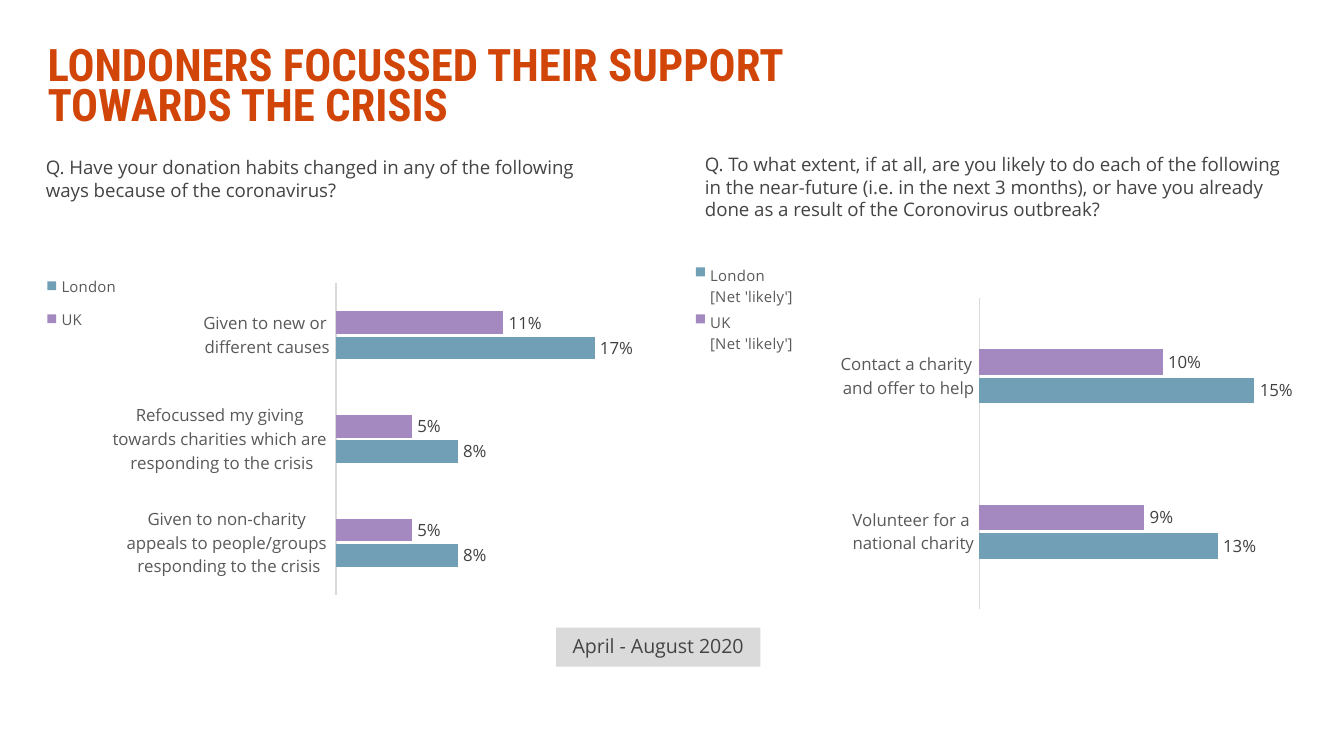
"""Build the slide on how Londoners supported charities during the crisis."""
from pptx import Presentation
from pptx import util as u
from pptx.chart.data import CategoryChartData
from pptx.dml.color import RGBColor
from pptx.enum import chart as charts, shapes, text
from pptx.oxml import parse_xml
from pptx.oxml.ns import nsdecls, qn

COLUMNS, ROWS = 100, 56.25
CELL = u.Inches(0.1)
BODY_FONT, TITLE_FONT = "Open Sans", "Roboto Condensed"
ORANGE = RGBColor(0xD2, 0x45, 0x08)
PURPLE = RGBColor(0xA3, 0x89, 0xBF)
BLUE = RGBColor(0x70, 0x9F, 0xB6)
INK = RGBColor(0x44, 0x44, 0x44)
LABEL_INK = RGBColor(0x40, 0x40, 0x40)
AXIS_INK = RGBColor(0x59, 0x59, 0x59)
AXIS_LINE = RGBColor(0xD9, 0xD9, 0xD9)
PANEL = RGBColor(0xDA, 0xDA, 0xDA)


def place(*cells):
    """Turn grid columns and rows into slide lengths."""
    return [u.Emu(round(cell * CELL)) for cell in cells]


def style_font(font, size, color, name=BODY_FONT, bold=False):
    """Set the face, size, weight and colour of a font."""
    font.name, font.size, font.bold = name, u.Pt(size), bold
    font.color.rgb = color


def write(shape, words, size, color=INK, name=BODY_FONT, bold=False):
    """Fill a shape with one wrapped paragraph and return the paragraph."""
    frame = shape.text_frame
    frame.word_wrap = True
    frame.text = words
    para = frame.paragraphs[0]
    style_font(para.runs[0].font, size, color, name, bold)
    return para


def add_text(page, area, words, size, **style):
    """Add a text box on the grid and return its paragraph."""
    return write(page.shapes.add_textbox(*place(*area)), words, size, **style)


def add_period(page, area, words):
    """Add the grey panel that names the survey period."""
    panel = page.shapes.add_shape(shapes.MSO_SHAPE.RECTANGLE, *place(*area))
    panel.shadow.inherit = False
    panel.fill.solid()
    panel.fill.fore_color.rgb = PANEL
    panel.line.fill.background()
    panel.text_frame.vertical_anchor = text.MSO_ANCHOR.MIDDLE
    para = write(panel, words, 10.5)
    para.alignment = text.PP_ALIGN.CENTER
    para.line_spacing = 0.9


def make_layout(area, frame, inner=False):
    """Describe a grid area as shares of the chart frame around it."""
    left, top, width, height = frame
    shares = {
        "x": (area[0] - left) / width,
        "y": (area[1] - top) / height,
        "w": area[2] / width,
        "h": area[3] / height,
    }
    target = '<c:layoutTarget val="inner"/>' if inner else ""
    modes = '<c:xMode val="edge"/><c:yMode val="edge"/>'
    sizes = "".join(f'<c:{key} val="{share:.4f}"/>' for key, share in shares.items())
    return parse_xml(
        f'<c:layout {nsdecls("c")}><c:manualLayout>{target}{modes}{sizes}'
        "</c:manualLayout></c:layout>"
    )


def set_layout(chart, tag, layout, index):
    """Replace the layout of the chart part with this tag."""
    parent = chart.element.find(f".//{qn(tag)}")
    for old in parent.findall(qn("c:layout")):
        parent.remove(old)
    parent.insert(index, layout)


def style_axes(chart, maximum):
    """Show only the category axis, from top to bottom."""
    categories, values = chart.category_axis, chart.value_axis
    categories.reverse_order = True
    categories.major_tick_mark = charts.XL_TICK_MARK.NONE
    categories.has_major_gridlines = False
    categories.format.line.color.rgb = AXIS_LINE
    categories.format.line.width = u.Pt(0.75)
    style_font(categories.tick_labels.font, 9, AXIS_INK)
    values.minimum_scale, values.maximum_scale = 0, maximum
    values.has_major_gridlines = False
    values.visible = False


def style_series(series, color):
    """Colour a series and label its bars with percentages."""
    series.format.fill.solid()
    series.format.fill.fore_color.rgb = color
    labels = series.data_labels
    labels.show_value = True
    labels.number_format, labels.number_format_is_linked = "0%", False
    labels.position = charts.XL_LABEL_POSITION.OUTSIDE_END
    style_font(labels.font, 9, LABEL_INK)


def add_bars(page, frame, plot, legend, categories, series, gap, maximum):
    """Add a clustered bar chart comparing the UK with London."""
    data = CategoryChartData(number_format="0%")
    data.categories = categories
    for name, values in series.items():
        data.add_series(name, values)
    chart = page.shapes.add_chart(
        charts.XL_CHART_TYPE.BAR_CLUSTERED, *place(*frame), data
    ).chart
    chart.has_title = False
    chart.font.name, chart.font.size = BODY_FONT, u.Pt(10)
    bars = chart.plots[0]
    bars.vary_by_categories = False
    bars.gap_width, bars.overlap = gap, -12
    style_axes(chart, maximum)
    for one, color in zip(bars.series, (PURPLE, BLUE)):
        style_series(one, color)
    chart.has_legend = True
    chart.legend.position = charts.XL_LEGEND_POSITION.LEFT
    chart.legend.include_in_layout = False
    style_font(chart.legend.font, 8, AXIS_INK)
    set_layout(chart, "c:plotArea", make_layout(plot, frame, inner=True), 0)
    set_layout(chart, "c:legend", make_layout(legend, frame), 1)


def main():
    """Build and save the slide."""
    deck = Presentation()
    deck.slide_width, deck.slide_height = place(COLUMNS, ROWS)
    page = deck.slides.add_slide(deck.slide_layouts[6])
    title = add_text(
        page, (2.55, 3.15, 66.9, 3.8),
        "LONDONERS FOCUSSED THEIR SUPPORT TOWARDS THE CRISIS",
        24, color=ORANGE, name=TITLE_FONT, bold=True,
    )
    title.line_spacing = 0.75
    add_bars(
        page, (2.4, 18.1, 44.7, 26.2), (25.1, 21.1, 20.46, 23.2), (2.6, 19.6, 7, 5.8),
        ["Given to new or \ndifferent causes",
         "Refocussed my giving \ntowards charities which are \nresponding to the crisis",
         "Given to non-charity \nappeals to people/groups \nresponding to the crisis"],
        {"UK": (0.11, 0.05, 0.05), "London": (0.17, 0.08, 0.08)},
        gap=250, maximum=0.18,
    )
    add_period(page, (41.37, 46.7, 15.2, 2.9), "April - August 2020")
    add_bars(
        page, (50.5, 19.2, 45.7, 26.2), (72.88, 22.2, 21.85, 23.2), (51.4, 19.3, 8, 7.4),
        ["Contact a charity\n and offer to help", "Volunteer for a \nnational charity"],
        {"UK \n[Net 'likely']": (0.10, 0.09), "London \n[Net 'likely']": (0.15, 0.13)},
        gap=400, maximum=0.16,
    )
    add_text(
        page, (2.43, 11.13, 41.8, 4.4),
        "Q. Have your donation habits changed in any of the following ways "
        "because of the coronavirus?", 10,
    )
    add_text(
        page, (51.47, 10.9, 45, 6.1),
        "Q. To what extent, if at all, are you likely to do each of the following "
        "in the near-future (i.e. in the next 3 months), or have you already done "
        "as a result of the Coronovirus outbreak?", 10,
    )
    deck.save("out.pptx")


if __name__ == "__main__":
    main()
